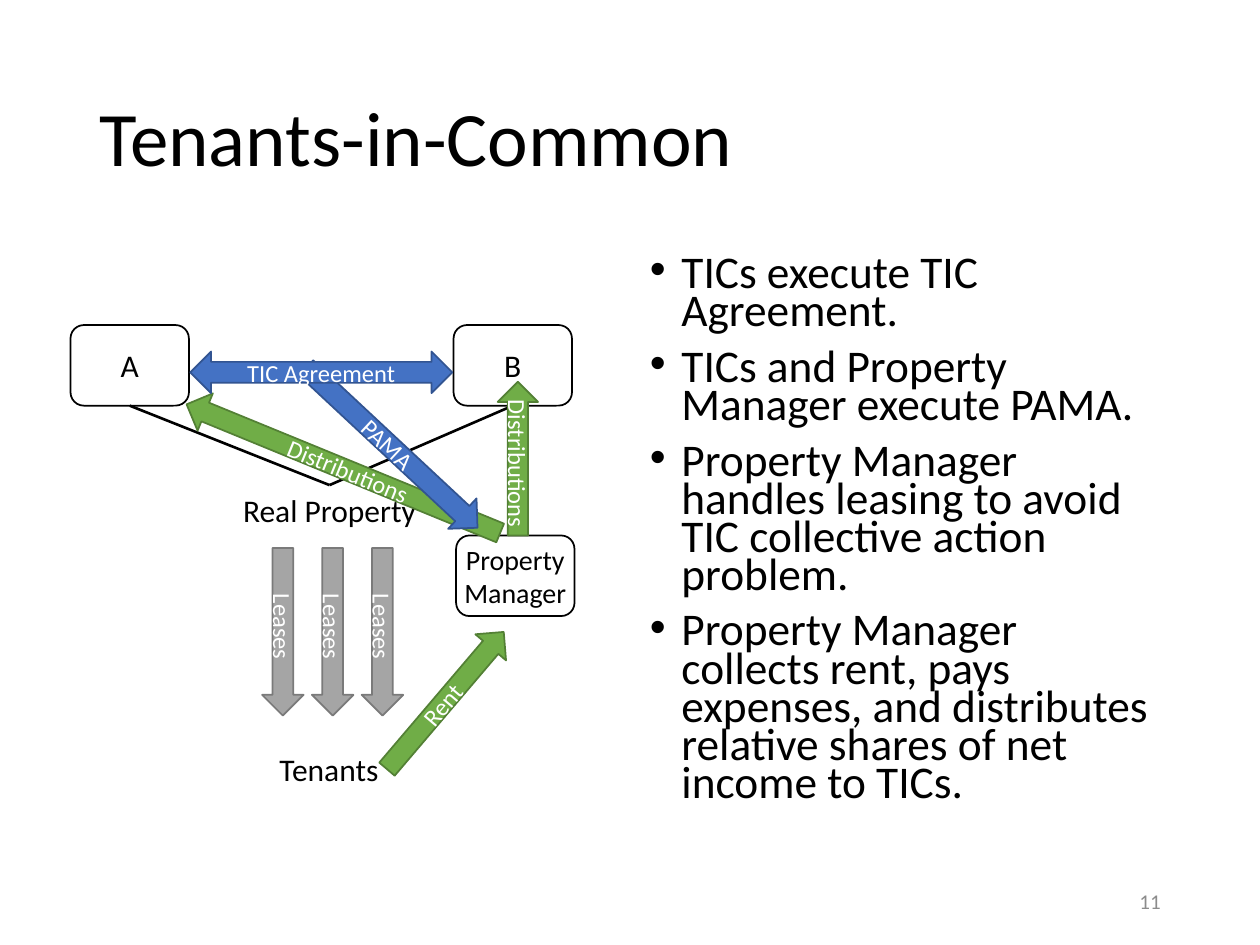
from dataclasses import dataclass

from lxml.etree import SubElement
from pptx import Presentation
from pptx.dml.color import RGBColor
from pptx.enum.shapes import MSO_CONNECTOR, MSO_SHAPE as SHAPE
from pptx.enum.text import MSO_ANCHOR as ANCHOR, PP_ALIGN as ALIGN
from pptx.oxml.ns import qn
from pptx.util import Inches, Pt

COLS, ROWS = 1000, 750  # grid cells across and down the slide
WIDTH, HEIGHT = Inches(10), Inches(7.5)
FONT = "Calibri"
COLORS = {
    "black": "000000", "white": "FFFFFF", "muted": "8C8C8C",
    "gray": "A5A5A5", "gray_edge": "7A7A7A",
    "green": "70AD47", "green_edge": "538035",
    "blue": "4472C4", "blue_edge": "325491",
}


@dataclass(frozen=True)
class Box:
    col: float
    row: float
    cols: float
    rows: float

    def emu(self) -> tuple[int, ...]:
        x, y = WIDTH / COLS, HEIGHT / ROWS
        return tuple(round(v) for v in
                     (self.col * x, self.row * y, self.cols * x, self.rows * y))


@dataclass(frozen=True)
class Arrow:
    text: str
    box: Box
    color: str
    rotation: float = 0
    flip_v: bool = False
    wrap: bool = True
    kind: SHAPE = SHAPE.RIGHT_ARROW


BULLETS = (
    "TICs execute TIC Agreement.",
    "TICs and Property Manager execute PAMA.",
    "Property Manager handles leasing to avoid TIC collective action problem.",
    "Property Manager collects rent, pays expenses, and distributes "
    "relative shares of net income to TICs.",
)
LEASES = [Arrow("Leases", Box(237 - 39.5 * i, 485, 133, 33), "gray", 90)
          for i in range(3)]
FLOWS = [
    Arrow("Rent", Box(282, 540, 143, 32), "green", 310.4),
    Arrow("Distributions", Box(138, 356, 269, 32), "green", 202.3, flip_v=True),
    Arrow("Distributions", Box(350, 348, 122, 32), "green", 270, flip_v=True,
          wrap=False),
    Arrow("PAMA", Box(218, 339, 186, 33), "blue", 43),
    Arrow("TIC Agreement", Box(151, 279, 208, 33), "blue",
          kind=SHAPE.LEFT_RIGHT_ARROW),
]


def rgb(name: str) -> RGBColor:
    return RGBColor.from_string(COLORS[name])


def write(s, lines, size: float, color: str = "black", frame=None, **para) -> None:
    """Fill a shape's text; frame and para hold attribute values to set."""
    tf = s.text_frame
    for name, value in ({"word_wrap": True} | (frame or {})).items():
        setattr(tf, name, value)
    for i, line in enumerate(lines):
        p = tf.add_paragraph() if i else tf.paragraphs[0]
        for name, value in para.items():
            setattr(p, name, value)
        r = p.add_run()
        r.text = line
        r.font.color.rgb = rgb(color)
        for name, value in {"name": FONT, "size": Pt(size)}.items():
            setattr(r.font, name, value)


def add_shape(sp, kind: SHAPE, box: Box, fill: str, edge: str):
    s = sp.add_shape(kind, *box.emu())
    s.shadow.inherit = False
    s.fill.solid()
    s.fill.fore_color.rgb = rgb(fill)
    s.line.color.rgb = rgb(edge)
    s.line.width = Pt(1)
    return s


def add_entity(sp, lines, col: float, row: float, size: float, wrap: bool = True):
    s = add_shape(sp, SHAPE.ROUNDED_RECTANGLE, Box(col, row, 94, 64),
                  "white", "black")
    write(s, lines, size, alignment=ALIGN.CENTER,
          frame={"word_wrap": wrap, "vertical_anchor": ANCHOR.MIDDLE})
    return s


def add_arrow(sp, arrow: Arrow) -> None:
    s = add_shape(sp, arrow.kind, arrow.box, arrow.color, f"{arrow.color}_edge")
    s.rotation = arrow.rotation
    if arrow.flip_v:
        s._element.spPr.xfrm.set("flipV", "1")
    write(s, [arrow.text], 14, "white", alignment=ALIGN.CENTER,
          frame={"word_wrap": arrow.wrap, "vertical_anchor": ANCHOR.MIDDLE})


def add_text(sp, lines, box: Box, size: float, color: str = "black",
             frame=None, **para):
    s = sp.add_textbox(*box.emu())
    write(s, lines, size, color, frame, **para)
    return s


def add_bullets(s) -> None:
    for p in s.text_frame.paragraphs:
        pPr = p._p.get_or_add_pPr()
        pPr.set("marL", str(Inches(0.25)))
        pPr.set("indent", str(-Inches(0.25)))
        SubElement(pPr, qn("a:buFont"), typeface="Arial")
        SubElement(pPr, qn("a:buChar"), char="•")


def join(sp, upper, lower) -> None:
    """Draw a line from the bottom of upper to the top of lower."""
    line = sp.add_connector(MSO_CONNECTOR.STRAIGHT, 0, 0, 0, 0)
    line.begin_connect(upper, 2)
    line.end_connect(lower, 0)
    line.line.color.rgb = rgb("black")
    line.line.width = Pt(1.5)
    SubElement(line._element.spPr, qn("a:effectLst"))


def main() -> None:
    prs = Presentation()
    prs.slide_width, prs.slide_height = WIDTH, HEIGHT
    slide = prs.slides.add_slide(prs.slide_layouts[5])
    sp = slide.shapes

    title = sp.title
    title.left, title.top, title.width, title.height = Box(69, 40, 862, 145).emu()
    write(title, ["Tenants-in-Common"], 44, alignment=ALIGN.LEFT,
          line_spacing=0.9, frame={"vertical_anchor": ANCHOR.MIDDLE})

    body = add_text(sp, BULLETS, Box(506, 200, 425, 476), 25.9,
                    line_spacing=0.7, space_before=Pt(10))
    add_bullets(body)

    owners = [add_entity(sp, [name], col, 258, 18)
              for name, col in (("A", 56), ("B", 360))]
    real_property = add_text(sp, ["Real Property"], Box(182, 385, 159, 40), 18,
                             alignment=ALIGN.CENTER, frame={"word_wrap": False})
    for owner in owners:
        join(sp, owner, real_property)
    add_entity(sp, ["Property", "Manager"], 362, 425, 16, wrap=False)

    for arrow in LEASES:
        add_arrow(sp, arrow)
    add_text(sp, ["Tenants"], Box(212, 590, 100, 40), 18,
             frame={"word_wrap": False})
    add_text(sp, ["11"], Box(706, 695, 225, 40), 12, "muted",
             alignment=ALIGN.RIGHT, frame={"vertical_anchor": ANCHOR.MIDDLE})
    for arrow in FLOWS:
        add_arrow(sp, arrow)

    prs.save("out.pptx")


if __name__ == "__main__":
    main()
